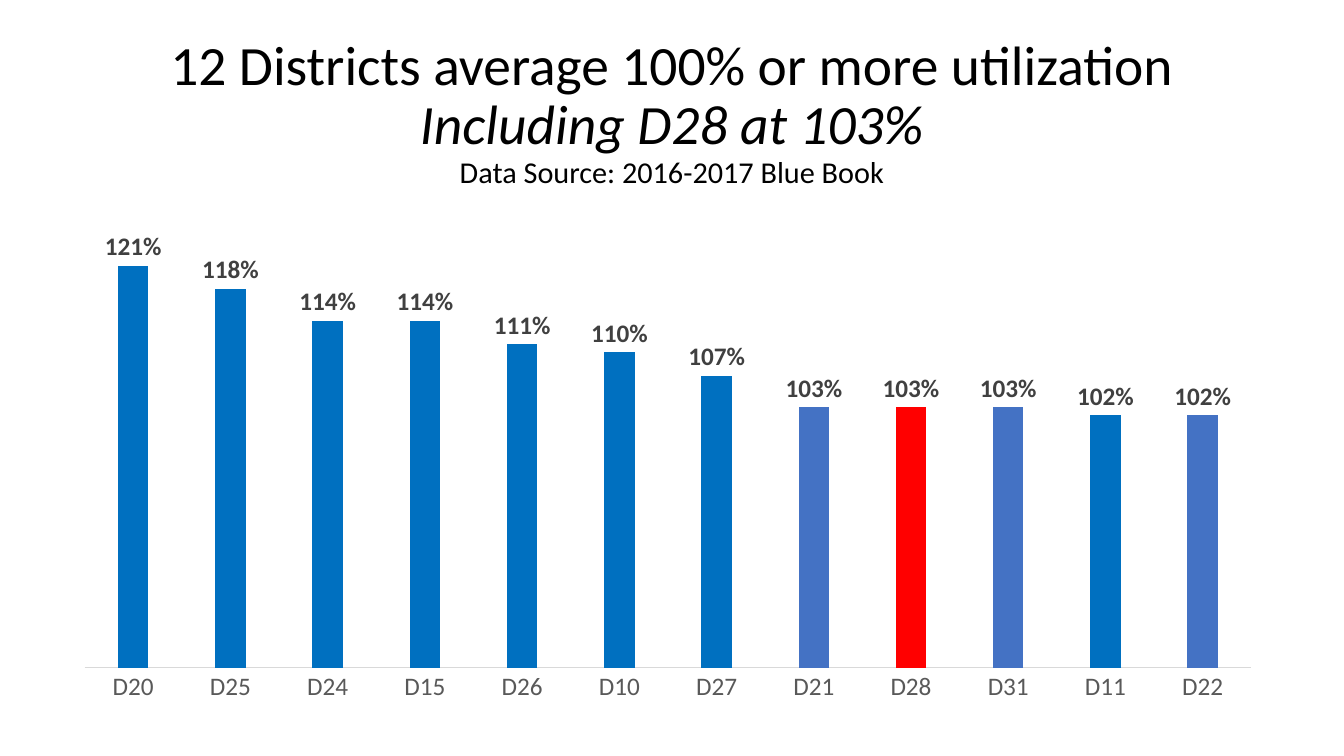
from lxml import etree
from pptx import Presentation
from pptx.chart.data import CategoryChartData
from pptx.dml.color import RGBColor
from pptx.enum import chart as ch, text as tx
from pptx.oxml import ns
from pptx.util import Pt

FONT = "Calibri"
BLACK = RGBColor(0x00, 0x00, 0x00)
BLUE = RGBColor(0x00, 0x70, 0xC0)
INDIGO = RGBColor(0x44, 0x72, 0xC4)
RED = RGBColor(0xFF, 0x00, 0x00)
DARK = RGBColor(0x40, 0x40, 0x40)
GREY = RGBColor(0x59, 0x59, 0x59)
PALE = RGBColor(0xD9, 0xD9, 0xD9)

# District, average utilization, bar colour
RATES = [
    ("D20", 1.21, BLUE), ("D25", 1.18, BLUE), ("D24", 1.14, BLUE),
    ("D15", 1.14, BLUE), ("D26", 1.11, BLUE), ("D10", 1.10, BLUE),
    ("D27", 1.07, BLUE), ("D21", 1.03, INDIGO), ("D28", 1.03, RED),
    ("D31", 1.03, INDIGO), ("D11", 1.02, BLUE), ("D22", 1.02, INDIGO),
]

# Text, size, italic
TITLE = [
    ("12 Districts average 100% or more utilization", 39.6, False),
    ("Including D28 at 103%", 39.6, True),
    ("Data Source: 2016-2017 Blue Book", 21.6, False),
]


def style(font, size, color, bold=False):
    font.name = FONT
    font.size = Pt(size)
    font.color.rgb = color
    font.bold = bold


def add_title(slide):
    box = slide.shapes.add_textbox(Pt(66), Pt(28.8), Pt(828), Pt(104.4))
    frame = box.text_frame
    frame.word_wrap = True
    frame.vertical_anchor = tx.MSO_ANCHOR.MIDDLE
    for i, (line, size, slant) in enumerate(TITLE):
        para = frame.add_paragraph() if i else frame.paragraphs[0]
        para.text = line
        para.alignment = tx.PP_ALIGN.CENTER
        para.line_spacing = 0.9
        style(para.font, size, BLACK)
        para.font.italic = slant


def set_plot(chart, **place):
    """Fix the inner plot area as fractions of the chart."""
    area = chart._chartSpace.find(".//" + ns.qn("c:plotArea"))
    for old in area.findall(ns.qn("c:layout")):
        area.remove(old)
    layout = etree.Element(ns.qn("c:layout"))
    manual = etree.SubElement(layout, ns.qn("c:manualLayout"))
    rules = {"layoutTarget": "inner", "xMode": "edge", "yMode": "edge", **place}
    for tag, val in rules.items():
        etree.SubElement(manual, ns.qn("c:" + tag)).set("val", str(val))
    area.insert(0, layout)


def add_bars(slide):
    data = CategoryChartData(number_format="0%")
    data.categories = [name for name, _, _ in RATES]
    data.add_series("Series 1", [rate for _, rate, _ in RATES])
    frame = slide.shapes.add_chart(
        ch.XL_CHART_TYPE.COLUMN_CLUSTERED,
        Pt(38.2), Pt(139), Pt(856), Pt(372.2), data)
    chart = frame.chart
    chart.has_legend = False
    chart.has_title = False
    style(chart.font, 10, BLACK)
    set_plot(chart, x=0.026, y=0, w=0.974, h=0.908)

    # Axes
    side = chart.value_axis
    side.minimum_scale = 0.7
    side.maximum_scale = 1.3
    side.has_major_gridlines = False
    side.visible = False
    base = chart.category_axis
    base.major_tick_mark = ch.XL_TICK_MARK.NONE
    base.format.line.color.rgb = PALE
    base.format.line.width = Pt(0.75)
    style(base.tick_labels.font, 18, GREY)

    # Bars
    plot = chart.plots[0]
    plot.gap_width = 219
    plot.overlap = -27
    plot.vary_by_categories = False
    bars = plot.series[0]
    bars.format.fill.solid()
    bars.format.fill.fore_color.rgb = INDIGO
    for i, (_, _, color) in enumerate(RATES):
        if color != INDIGO:
            fill = bars.points[i].format.fill
            fill.solid()
            fill.fore_color.rgb = color

    # Value labels
    labels = bars.data_labels
    labels.show_value = True
    labels.position = ch.XL_LABEL_POSITION.OUTSIDE_END
    labels.number_format = "0%"
    labels.number_format_is_linked = False
    style(labels.font, 18, DARK, bold=True)


def main():
    deck = Presentation()
    deck.slide_width = Pt(960)
    deck.slide_height = Pt(540)
    slide = deck.slides.add_slide(deck.slide_layouts[6])
    add_title(slide)
    add_bars(slide)
    deck.save("out.pptx")


if __name__ == "__main__":
    main()
